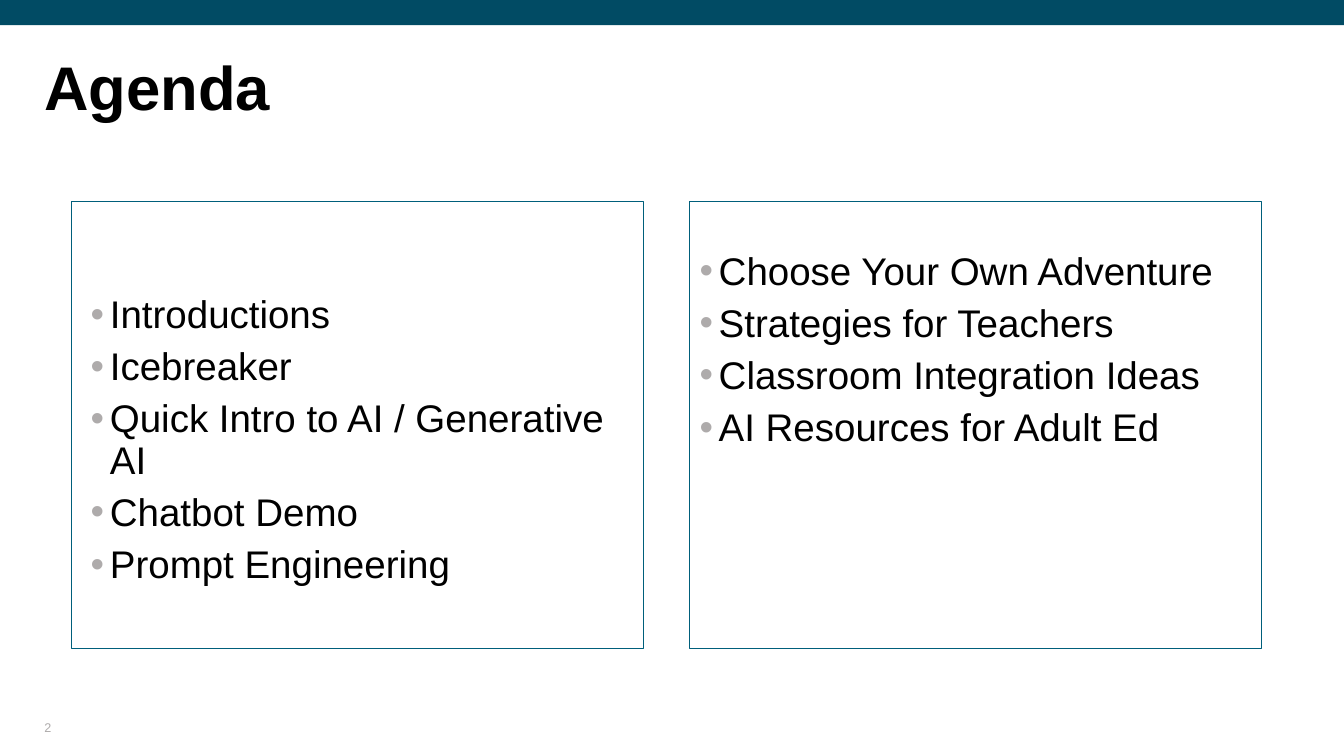
import pptx
import pptx.dml.color
import pptx.enum.shapes
import pptx.enum.text
import pptx.oxml
import pptx.oxml.ns
import pptx.util
from dataclasses import dataclass

Inches = pptx.util.Inches
Pt = pptx.util.Pt


@dataclass(frozen=True)
class Theme:
    font: str = "Arial"
    text: str = "000000"
    band: str = "014B64"
    border: str = "005F7B"
    muted: str = "AEABAB"
    title_size: float = 44
    body_size: float = 27.5
    number_size: float = 9


class AgendaSlide:
    def __init__(self, presentation, theme):
        self.theme = theme
        self.slide = presentation.slides.add_slide(presentation.slide_layouts[5])

    def format_frame(self, frame, insets, anchor):
        left, top, right, bottom = insets
        values = {
            "word_wrap": True,
            "auto_size": pptx.enum.text.MSO_AUTO_SIZE.NONE,
            "vertical_anchor": anchor,
            "margin_left": Inches(left),
            "margin_top": Inches(top),
            "margin_right": Inches(right),
            "margin_bottom": Inches(bottom),
        }
        for name, value in values.items():
            setattr(frame, name, value)

    def format_paragraph(self, paragraph, size, color, bold=False, spacing=0.9):
        paragraph.alignment = pptx.enum.text.PP_ALIGN.LEFT
        paragraph.line_spacing = spacing
        values = {"name": self.theme.font, "size": Pt(size), "bold": bold}
        for name, value in values.items():
            setattr(paragraph.font, name, value)
        paragraph.font.color.rgb = pptx.dml.color.RGBColor.from_string(color)

    def add_rectangle(self, left, top, width, height, fill=None, line=None):
        shape = self.slide.shapes.add_shape(
            pptx.enum.shapes.MSO_SHAPE.RECTANGLE,
            Inches(left), Inches(top), Inches(width), Inches(height))
        shape.shadow.inherit = False
        if fill:
            shape.fill.solid()
            shape.fill.fore_color.rgb = pptx.dml.color.RGBColor.from_string(fill)
        else:
            shape.fill.background()
        if line:
            shape.line.color.rgb = pptx.dml.color.RGBColor.from_string(line)
            shape.line.width = Pt(0.75)
        else:
            shape.line.fill.background()
        return shape

    def add_bullet(self, paragraph):
        properties = paragraph._p.get_or_add_pPr()
        properties.set("marL", str(Inches(0.19)))
        properties.set("indent", str(-Inches(0.19)))
        namespace = pptx.oxml.ns.nsdecls("a")
        for xml in (
            f'<a:buClr {namespace}><a:srgbClr val="{self.theme.muted}"/></a:buClr>',
            f'<a:buFont {namespace} typeface="{self.theme.font}"/>',
            f'<a:buChar {namespace} char="•"/>',
        ):
            properties.append(pptx.oxml.parse_xml(xml))

    def add_title(self, text, left, top, width, height):
        title = self.slide.shapes.title
        values = {"left": left, "top": top, "width": width, "height": height}
        for name, value in values.items():
            setattr(title, name, Inches(value))
        title.text_frame.text = text
        self.format_frame(title.text_frame, (0, 0, 0, 0), pptx.enum.text.MSO_ANCHOR.TOP)
        self.format_paragraph(
            title.text_frame.paragraphs[0], self.theme.title_size, self.theme.text, bold=True)

    def add_topics(self, topics, left, side_inset, top_inset):
        panel = self.add_rectangle(left, 2, 5.67, 4.43, line=self.theme.border)
        frame = panel.text_frame
        frame.text = "\n".join(topics)
        self.format_frame(
            frame, (side_inset, top_inset, side_inset, 0.05), pptx.enum.text.MSO_ANCHOR.TOP)
        for index, paragraph in enumerate(frame.paragraphs):
            self.add_bullet(paragraph)
            self.format_paragraph(paragraph, self.theme.body_size, self.theme.text)
            paragraph.space_before = Pt(7.5 if index else 0)

    def add_number(self, text, left, top, width, height):
        box = self.slide.shapes.add_textbox(
            Inches(left), Inches(top), Inches(width), Inches(height))
        box.text_frame.text = text
        self.format_frame(box.text_frame, (0, 0, 0, 0), pptx.enum.text.MSO_ANCHOR.BOTTOM)
        self.format_paragraph(
            box.text_frame.paragraphs[0], self.theme.number_size, self.theme.muted, spacing=1.0)


def main():
    presentation = pptx.Presentation()
    presentation.slide_width = Inches(13.33)
    presentation.slide_height = Inches(7.5)
    theme = Theme()
    agenda = AgendaSlide(presentation, theme)
    agenda.add_rectangle(0, 0, 13.33, 0.25, fill=theme.band)
    agenda.add_title("Agenda", 0.44, 0.57, 12.32, 1.27)
    agenda.add_topics(
        ["Introductions", "Icebreaker", "Quick Intro to AI / Generative AI",
         "Chatbot Demo", "Prompt Engineering"],
        left=0.71, side_inset=0.19, top_inset=0.93)
    agenda.add_topics(
        ["Choose Your Own Adventure", "Strategies for Teachers",
         "Classroom Integration Ideas", "AI Resources for Adult Ed"],
        left=6.84, side_inset=0.1, top_inset=0.5)
    agenda.add_number("2", 0.44, 7.05, 3, 0.24)
    presentation.save("out.pptx")


if __name__ == "__main__":
    main()
